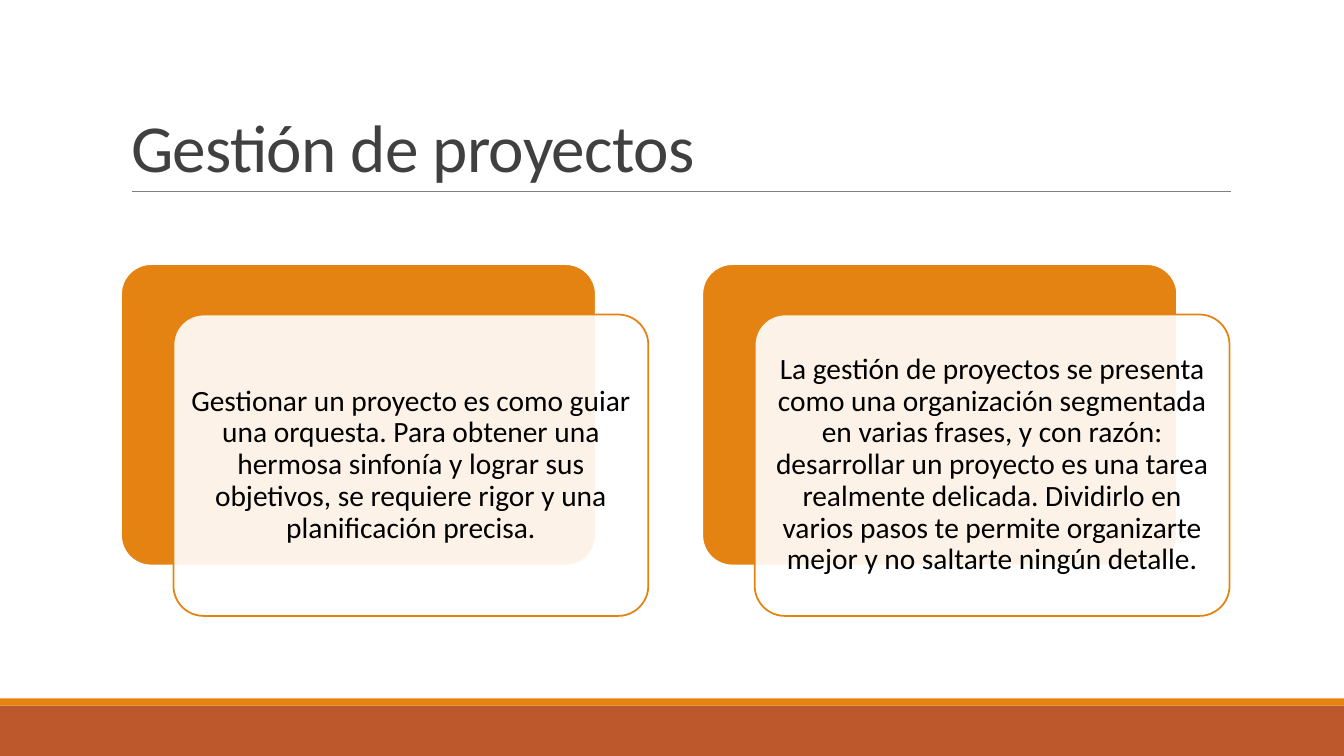
from lxml import etree
from pptx import Presentation
from pptx import util as u
from pptx.dml.color import RGBColor
from pptx.enum import shapes, text
from pptx.oxml.ns import qn

ORANGE = "E48312"
RUST = "BD582C"
WHITE = "FFFFFF"
CARD_TOP = 2.62
CARD_WIDTH = 4.71
CARD_HEIGHT = 2.99
CARD_OFFSET_X = 0.52
CARD_OFFSET_Y = 0.5
CARD_PITCH = 5.765
LEFT = 1.2

MESSAGES = [
    "Gestionar un proyecto es como guiar una orquesta. Para obtener una hermosa "
    "sinfonía y lograr sus objetivos, se requiere rigor y una planificación precisa.",
    "La gestión de proyectos se presenta como una organización segmentada en varias "
    "frases, y con razón: desarrollar un proyecto es una tarea realmente delicada. "
    "Dividirlo en varios pasos te permite organizarte mejor y no saltarte ningún detalle.",
]


def color(value):
    """Return the colour for a hex string."""
    return RGBColor.from_string(value)


def format_text(paragraph, size, font_color, alignment, line_spacing):
    """Format a paragraph and its runs."""
    paragraph.alignment = alignment
    paragraph.line_spacing = line_spacing
    for run in paragraph.runs:
        run.font.name = "Calibri"
        run.font.size = u.Pt(size)
        run.font.color.rgb = color(font_color)


def add_block(slide, kind, left, top, width, height, fill, line=None):
    """Add a filled preset shape with an optional outline."""
    shape = slide.shapes.add_shape(
        kind, u.Inches(left), u.Inches(top), u.Inches(width), u.Inches(height)
    )
    shape.shadow.inherit = False
    shape.fill.solid()
    shape.fill.fore_color.rgb = color(fill)
    if line:
        shape.line.color.rgb = color(line)
        shape.line.width = u.Pt(1.25)
    else:
        shape.line.fill.background()
    return shape


def add_rounded(slide, left, top, fill, line):
    """Add one rounded rectangle of a card."""
    shape = add_block(slide, shapes.MSO_SHAPE.ROUNDED_RECTANGLE, left, top,
                      CARD_WIDTH, CARD_HEIGHT, fill, line)
    shape.adjustments[0] = 0.1
    return shape


def set_opacity(shape, percent):
    """Set the opacity of a solid fill."""
    fill_color = shape.fill._xPr.find(qn("a:solidFill"))[0]
    etree.SubElement(fill_color, qn("a:alpha")).set("val", str(percent * 1000))


def add_card(slide, left, message):
    """Add an orange panel with a translucent text panel over it."""
    add_rounded(slide, left, CARD_TOP, ORANGE, WHITE)
    panel = add_rounded(slide, left + CARD_OFFSET_X, CARD_TOP + CARD_OFFSET_Y, WHITE, ORANGE)
    set_opacity(panel, 90)
    frame = panel.text_frame
    frame.word_wrap = True
    frame.vertical_anchor = text.MSO_ANCHOR.MIDDLE
    frame.margin_left = frame.margin_right = u.Inches(0.09)
    frame.margin_top = frame.margin_bottom = u.Inches(0.09)
    frame.text = message
    format_text(frame.paragraphs[0], 21, "000000", text.PP_ALIGN.CENTER, 0.9)


def add_title(slide, wording):
    """Place and format the slide title."""
    title = slide.shapes.title
    title.left, title.top = u.Inches(LEFT), u.Inches(0.31)
    title.width, title.height = u.Inches(11), u.Inches(1.59)
    frame = title.text_frame
    frame.text = wording
    frame.word_wrap = True
    frame.auto_size = text.MSO_AUTO_SIZE.NONE
    frame.vertical_anchor = text.MSO_ANCHOR.BOTTOM
    paragraph = frame.paragraphs[0]
    format_text(paragraph, 48, "404040", text.PP_ALIGN.LEFT, 0.85)
    paragraph.runs[0].font._element.set("spc", "-50")


def add_rule(slide):
    """Add the thin line under the title."""
    rule = slide.shapes.add_connector(
        shapes.MSO_CONNECTOR.STRAIGHT,
        u.Inches(1.31), u.Inches(1.9), u.Inches(12.21), u.Inches(1.9),
    )
    rule.line.color.rgb = color("808080")
    rule.line.width = u.Pt(0.5)
    etree.SubElement(rule._element.spPr, qn("a:effectLst"))


def main():
    """Build the slide and save it."""
    presentation = Presentation()
    presentation.slide_width = u.Inches(13.33)
    presentation.slide_height = u.Inches(7.5)
    slide = presentation.slides.add_slide(presentation.slide_layouts[5])
    rectangle = shapes.MSO_SHAPE.RECTANGLE
    add_block(slide, rectangle, 0, 7, 13.33, 0.5, RUST)
    add_block(slide, rectangle, 0, 6.93, 13.33, 0.07, ORANGE)
    add_rule(slide)
    add_title(slide, "Gestión de proyectos")
    for index, message in enumerate(MESSAGES):
        add_card(slide, LEFT + index * CARD_PITCH, message)
    presentation.save("out.pptx")


if __name__ == "__main__":
    main()
